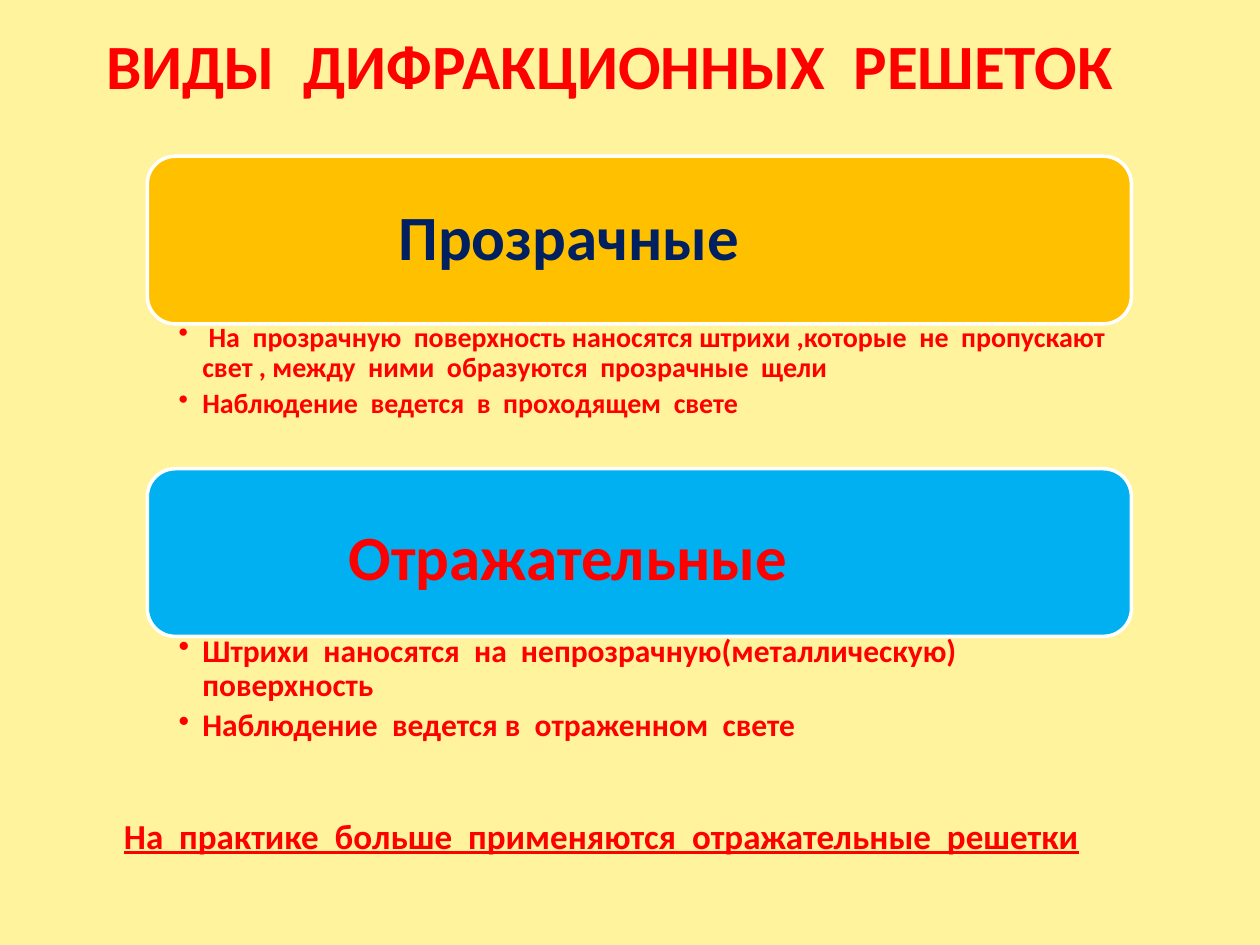
from lxml import etree
from pptx import Presentation
from pptx.dml.color import RGBColor
from pptx.enum.shapes import MSO_SHAPE
from pptx.enum.text import MSO_ANCHOR, PP_ALIGN
from pptx.oxml.ns import qn
from pptx.util import Cm, Pt

ROUNDED = MSO_SHAPE.ROUNDED_RECTANGLE
RECT = MSO_SHAPE.RECTANGLE
TOP, MIDDLE = MSO_ANCHOR.TOP, MSO_ANCHOR.MIDDLE
LEFT, CENTER = PP_ALIGN.LEFT, PP_ALIGN.CENTER

FONT = "Calibri"
COLORS = {
    "paper": "FFF39D",
    "red": "FF0000",
    "navy": "002060",
    "amber": "FFC000",
    "blue": "00B0F0",
    "white": "FFFFFF",
}
GRATINGS = [
    dict(
        heading="Прозрачные", fill="amber", color="navy", indent=4.9, drop=0, size=16,
        points=[
            " На  прозрачную  поверхность наносятся штрихи ,которые  не  пропускают  свет , "
            "между  ними  образуются  прозрачные  щели",
            "Наблюдение  ведется  в  проходящем  свете",
        ],
    ),
    dict(
        heading="Отражательные", fill="blue", color="red", indent=3.9, drop=0.3, size=18,
        points=[
            "Штрихи  наносятся  на  непрозрачную(металлическую) поверхность",
            "Наблюдение  ведется в  отраженном  свете",
        ],
    ),
]


def rgb(name):
    return RGBColor.from_string(COLORS[name])


def set_frame(tf, margins, anchor=TOP, wrap=True):
    tf.word_wrap = wrap
    tf.vertical_anchor = anchor
    tf.margin_left, tf.margin_top, tf.margin_right, tf.margin_bottom = map(Cm, margins)


def add_text(p, text, size, color="red", align=LEFT, underline=False, spacing=None):
    p.alignment = align
    if spacing:
        p.line_spacing = spacing
    r = p.add_run()
    r.text = text
    r.font.name = FONT
    r.font.size = Pt(size)
    r.font.bold = True
    r.font.underline = underline
    r.font.color.rgb = rgb(color)


def add_bullet(p):
    pPr = p._p.get_or_add_pPr()
    pPr.set("marL", str(Cm(0.48)))
    pPr.set("indent", str(-Cm(0.48)))
    etree.SubElement(pPr, qn("a:buChar")).set("char", "•")


def add_panel(s, kind, box, fill, line=None):
    sp = s.shapes.add_shape(kind, *map(Cm, box))
    sp.shadow.inherit = False
    sp.fill.solid()
    sp.fill.fore_color.rgb = rgb(fill)
    if line:
        sp.line.color.rgb = rgb(line)
        sp.line.width = Pt(2)
    else:
        sp.line.fill.background()
    return sp


def add_title(s, box):
    tf = s.shapes.add_textbox(*map(Cm, box)).text_frame
    set_frame(tf, (0.25, 0.13, 0.25, 0.13), wrap=False)
    add_text(tf.paragraphs[0], "ВИДЫ  ДИФРАКЦИОННЫХ  РЕШЕТОК", 36, align=CENTER)


def add_grating(s, box, heading, fill, color, indent, drop, size, points):
    x, y, w, h = box
    head_h = 3.38
    tf = add_panel(s, ROUNDED, (x, y, w, head_h), fill, "white").text_frame
    set_frame(tf, (indent, 0.2 + drop, 0.2, 0.2), MIDDLE)
    add_text(tf.paragraphs[0], heading, 36, color, spacing=0.9)

    body_y = 3.3
    tf = s.shapes.add_textbox(*map(Cm, (x, y + body_y, w, h - body_y))).text_frame
    set_frame(tf, (0.63, 0.06, 0.33, 0.06))
    for i, point in enumerate(points):
        p = tf.add_paragraph() if i else tf.paragraphs[0]
        add_text(p, point, size, spacing=0.9)
        p.space_after = Pt(3.5)
        add_bullet(p)


def add_conclusion(s, box):
    tf = add_panel(s, RECT, box, "paper").text_frame
    set_frame(tf, (1.1, 0.13, 0.25, 0.13))
    add_text(tf.paragraphs[0], "На  практике  больше  применяются  отражательные  решетки",
             20, underline=True)


def main():
    prs = Presentation()
    prs.slide_width, prs.slide_height = Cm(25.4), Cm(19.05)
    s = prs.slides.add_slide(prs.slide_layouts[6])
    s.background.fill.solid()
    s.background.fill.fore_color.rgb = rgb("paper")

    add_title(s, (1.78, 0.4, 21.03, 1.8))
    pitch = 6.3
    for i, grating in enumerate(GRATINGS):
        add_grating(s, (2.97, 3.15 + i * pitch, 19.84, pitch), **grating)
    add_conclusion(s, (1.4, 16.28, 22.63, 1.11))
    prs.save("out.pptx")


if __name__ == "__main__":
    main()
